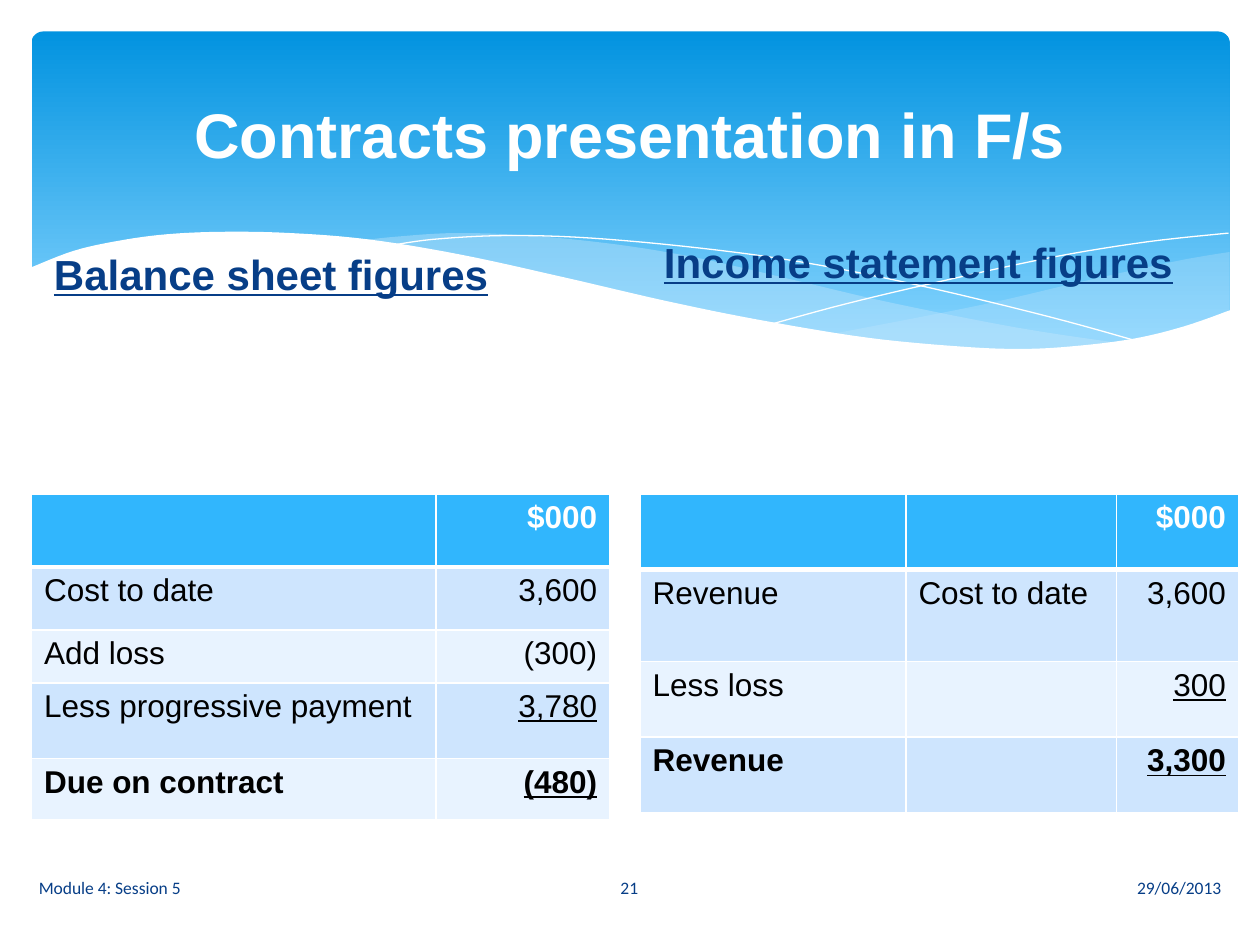
import pptx
import pptx.dml.color
import pptx.enum.shapes
import pptx.enum.text
import pptx.oxml
import pptx.oxml.ns
import pptx.util
from pptx.util import Inches

PP = pptx.enum.text.PP_ALIGN
ANCHOR = pptx.enum.text.MSO_ANCHOR

THEME = {
    "font": "Arial", "footer_font": "Calibri",
    "title": 36, "heading": 24, "cell": 18, "footer": 10,
    "white": "FFFFFF", "black": "000000", "navy": "073E87",
    "banner_top": "0293E0", "banner_bottom": "83D3FE", "wave": "C6E7FC",
    "header": "31B6FD", "bands": ("CEE5FE", "E8F3FF"),
}

TITLE = ("Contracts presentation in F/s", (0.5, 0.37, 9, 1.37))
# text, box, left inset
HEADINGS = [
    ("Balance sheet figures", (0.33, 1.92, 4.59, 5.08), 0.1),
    ("Income statement figures", (5.08, 1.83, 4.67, 4.87), 0.19),
]
FOOTERS = [
    ("Module 4: Session 5", (0.21, 6.84, 4.14, 0.4), PP.LEFT),
    ("21", (4.36, 6.84, 1.27, 0.4), PP.CENTER),
    ("29/06/2013", (5.65, 6.84, 4.14, 0.4), PP.RIGHT),
]
# The last row is a bold total; amounts in the last two rows are underlined.
TABLES = [
    {"at": (5.08, 3.92), "cols": (2.11, 1.67, 0.97), "heights": (0.6, 0.73, 0.6, 0.6),
     "rows": [("", "", "$000"),
              ("Revenue", "Cost to date", "3,600"),
              ("Less loss", "", "300"),
              ("Revenue", "", "3,300")]},
    {"at": (0.25, 3.92), "cols": (3.21, 1.38), "heights": (0.58, 0.5, 0.42, 0.6, 0.49),
     "rows": [("", "$000"),
              ("Cost to date", "3,600"),
              ("Add loss", "(300)"),
              ("Less progressive payment", "3,780"),
              ("Due on contract", "(480)")]},
]
# Each outline is a chain of smooth curves through the listed points.
RIGHT_WAVE = [
    [(9.76, 2), (9.35, 2.07), (8.61, 2.23), (7.79, 2.42), (6.61, 2.65)],
    [(6.61, 2.65), (7.19, 2.72), (7.69, 2.77), (8.14, 2.78), (8.63, 2.75),
     (9.05, 2.69), (9.42, 2.59), (9.76, 2.47)],
]
MIDDLE_WAVE = [
    [(8.93, 2.73), (8.07, 2.6), (7.06, 2.4), (6.29, 2.22), (5.55, 2.05), (4.89, 1.94),
     (4.2, 1.87), (3.61, 1.85), (3.13, 1.88), (2.86, 1.91)],
    [(2.86, 1.91), (3.62, 2.03), (4.49, 2.22), (5.3, 2.4), (6.01, 2.55), (6.8, 2.68),
     (7.48, 2.76), (8.07, 2.78), (8.57, 2.77), (8.93, 2.73)],
]
FALLING_LINE = [[(3.09, 1.95), (3.44, 1.9), (4.01, 1.87), (4.69, 1.89), (5.56, 1.97),
                 (6.36, 2.08), (7.27, 2.26), (8.31, 2.51), (9.07, 2.72)]]
RISING_LINE = [[(6.13, 2.57), (6.72, 2.41), (7.48, 2.23), (8.36, 2.04), (9.1, 1.92), (9.75, 1.85)]]
WHITE_WAVE = [
    [(9.77, 2.46), (9.4, 2.59), (8.99, 2.69), (8.5, 2.75), (8.09, 2.77), (7.61, 2.75),
     (6.88, 2.68), (6.03, 2.54), (5.29, 2.39), (4.47, 2.2), (3.65, 2.02), (2.92, 1.9),
     (2.3, 1.85), (1.77, 1.84), (1.32, 1.86), (0.95, 1.91), (0.59, 1.99), (0.23, 2.13)],
    [(0.23, 3.29), (9.77, 3.29)],
]


def rgb(code):
    return pptx.dml.color.RGBColor.from_string(code)


def sub(parent, tag, **attrs):
    el = pptx.oxml.parse_xml("<a:%s %s/>" % (tag, pptx.oxml.ns.nsdecls("a")))
    for name, value in attrs.items():
        el.set(name, str(value))
    parent.append(el)
    return el


def smooth(points, steps=6):
    """Sample a Catmull-Rom spline through the points."""
    padded = [points[0], *points, points[-1]]
    out = [points[0]]
    for a, b, c, d in zip(padded, padded[1:], padded[2:], padded[3:]):
        for i in range(1, steps + 1):
            t = i / steps
            out.append(tuple(
                q + t * ((r - p) + t * ((2 * p - 5 * q + 4 * r - s) + t * (3 * q - p - 3 * r + s))) / 2
                for p, q, r, s in zip(a, b, c, d)))
    return out


def add_outline(slide, curves, fill=None, alpha=None):
    """Draw a filled area, or a white hairline when no fill is given."""
    pts = [(Inches(x), Inches(y)) for curve in curves for x, y in smooth(curve)]
    builder = slide.shapes.build_freeform(*pts[0], scale=1.0)
    builder.add_line_segments(pts[1:], close=fill is not None)
    sp = builder.convert_to_shape()
    sp.shadow.inherit = False
    if fill is None:
        sp.fill.background()
        sp.line.color.rgb = rgb(THEME["white"])
        sp.line.width = 0
        return
    sp.fill.solid()
    sp.fill.fore_color.rgb = rgb(fill)
    sp.line.fill.background()
    if alpha:
        color = sp.fill._xPr.find(".//" + pptx.oxml.ns.qn("a:srgbClr"))
        sub(color, "alpha", val=alpha * 1000)


def add_banner(slide):
    sp = slide.shapes.add_shape(pptx.enum.shapes.MSO_SHAPE.ROUNDED_RECTANGLE,
                                *map(Inches, (0.25, 0.25, 9.51, 2.7)))
    sp.adjustments[0] = 0.034
    sp.shadow.inherit = False
    sp.line.fill.background()
    sp.fill.gradient()
    sp.fill.gradient_angle = 270
    stops = ((0, THEME["banner_top"]), (0.9, THEME["banner_bottom"]))
    for stop, (position, color) in zip(sp.fill.gradient_stops, stops):
        stop.position = position
        stop.color.rgb = rgb(color)


def write(tf, text, size, color, align=PP.LEFT, font=THEME["font"], bold=False, underline=False):
    p = tf.paragraphs[0]
    p.alignment = align
    r = p.add_run()
    r.text = text
    r.font.name = font
    r.font.size = pptx.util.Pt(size)
    r.font.color.rgb = rgb(color)
    r.font.bold = bold
    r.font.underline = underline
    return p


def add_box(slide, box, anchor=ANCHOR.MIDDLE):
    tf = slide.shapes.add_textbox(*map(Inches, box)).text_frame
    tf.word_wrap = True
    tf.vertical_anchor = anchor
    return tf


def set_borders(cell, bottom):
    tcPr = cell._tc.get_or_add_tcPr()
    for i, (tag, width) in enumerate((("lnL", 1), ("lnR", 1), ("lnT", 1), ("lnB", bottom))):
        ln = sub(tcPr, tag, w=pptx.util.Pt(width))
        sub(sub(ln, "solidFill"), "srgbClr", val=THEME["white"])
        tcPr.insert(i, ln)


def add_figures(slide, at, cols, heights, rows):
    size = (sum(cols), sum(heights))
    table = slide.shapes.add_table(len(rows), len(cols), *map(Inches, at + size)).table
    for column, width in zip(table.columns, cols):
        column.width = Inches(width)
    for i, (row, height) in enumerate(zip(rows, heights)):
        table.rows[i].height = Inches(height)
        header, total = i == 0, i == len(rows) - 1
        for j, text in enumerate(row):
            cell = table.cell(i, j)
            amount = j == len(cols) - 1
            cell.fill.solid()
            cell.fill.fore_color.rgb = rgb(THEME["header"] if header else THEME["bands"][(i - 1) % 2])
            set_borders(cell, bottom=3 if header else 1)
            if text:
                write(cell.text_frame, text, THEME["cell"], THEME["white" if header else "black"],
                      PP.RIGHT if amount else PP.LEFT, bold=header or total,
                      underline=amount and i >= len(rows) - 2)


def main():
    prs = pptx.Presentation()
    prs.slide_width, prs.slide_height = Inches(10), Inches(7.5)
    slide = prs.slides.add_slide(prs.slide_layouts[6])

    add_banner(slide)
    add_outline(slide, RIGHT_WAVE, THEME["wave"], 29)
    add_outline(slide, MIDDLE_WAVE, THEME["wave"], 40)
    add_outline(slide, FALLING_LINE)
    add_outline(slide, RISING_LINE)
    add_outline(slide, WHITE_WAVE, THEME["white"])

    text, box = TITLE
    write(add_box(slide, box), text, THEME["title"], THEME["white"], PP.CENTER, bold=True)
    for text, box, align in FOOTERS:
        write(add_box(slide, box), text, THEME["footer"], THEME["navy"], align, THEME["footer_font"])
    for text, box, inset in HEADINGS:
        tf = add_box(slide, box, ANCHOR.TOP)
        tf.margin_left = Inches(inset)
        p = write(tf, text, THEME["heading"], THEME["navy"], bold=True, underline=True)
        p.space_before = pptx.util.Pt(4.8)
    for figures in TABLES:
        add_figures(slide, **figures)

    prs.save("out.pptx")


if __name__ == "__main__":
    main()
